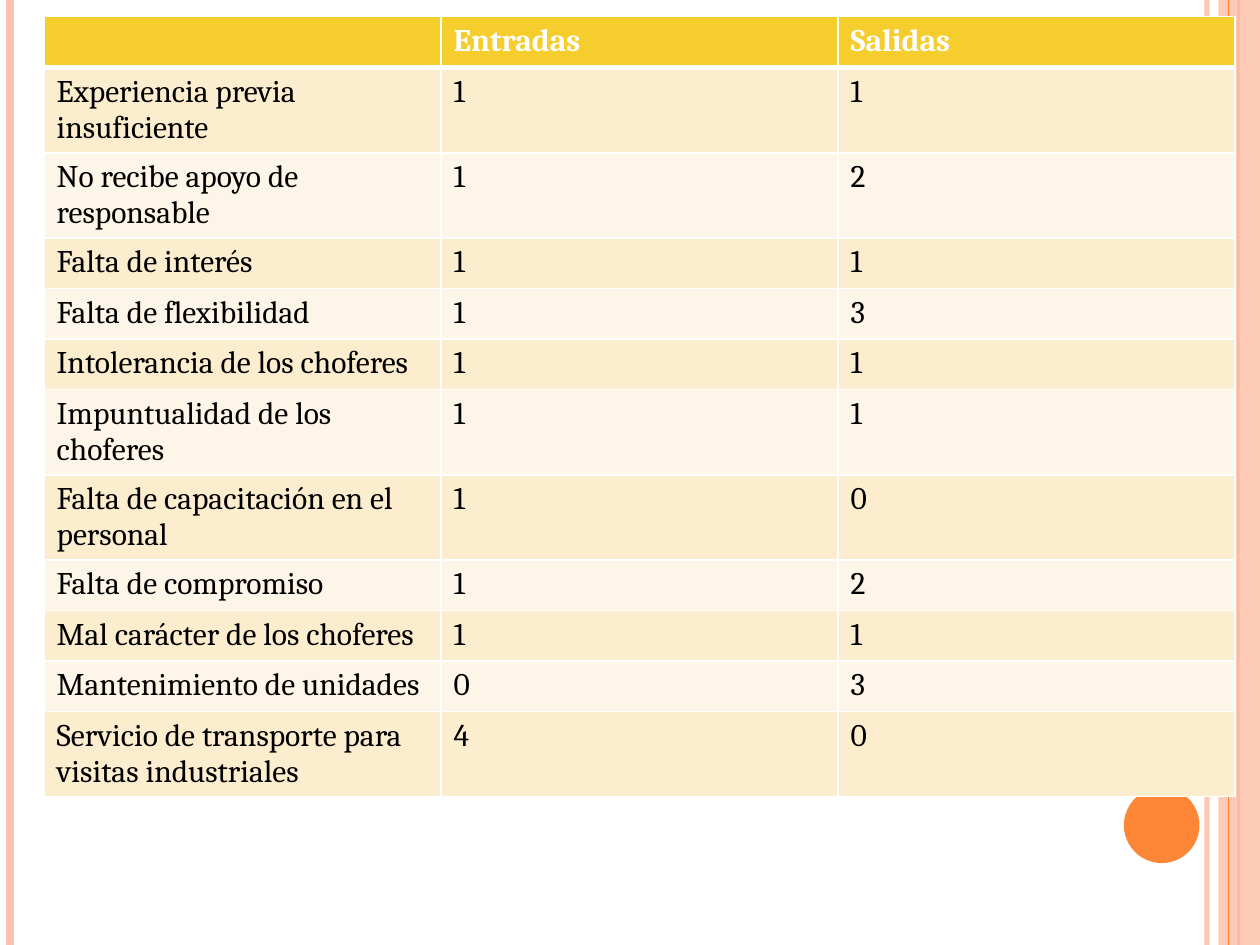
"""Build a slide with a table of entries and exits per transport problem."""
from dataclasses import dataclass

from lxml import etree
from pptx import Presentation
from pptx.dml.color import RGBColor
from pptx.enum.shapes import MSO_CONNECTOR, MSO_SHAPE
from pptx.oxml.ns import qn
from pptx.util import Inches, Pt

STRAIGHT = MSO_CONNECTOR.STRAIGHT
RECTANGLE = MSO_SHAPE.RECTANGLE
OVAL = MSO_SHAPE.OVAL
BLANK_LAYOUT = 6


@dataclass(frozen=True)
class Theme:
    """Colours, font and sizes of the slide."""
    font: str = "Cambria"
    text_size: int = 18
    orange: str = "FE8637"
    peach: str = "FEC3AE"
    header: str = "F5CD2D"
    bands: tuple = ("FDF6E8", "FBEDCD")
    white: str = "FFFFFF"
    black: str = "000000"


def set_alpha(shape, percent):
    """Make the first colour of a shape partly transparent."""
    colour = next(shape.element.spPr.iter(qn("a:srgbClr")))
    etree.SubElement(colour, qn("a:alpha")).set("val", str(percent * 1000))


def add_border(cell, side, points, colour):
    """Append one solid border to a table cell."""
    properties = cell._tc.get_or_add_tcPr()
    line = etree.SubElement(properties, qn(f"a:ln{side}"), w=str(Pt(points)))
    fill = etree.SubElement(line, qn("a:solidFill"))
    etree.SubElement(fill, qn("a:srgbClr"), val=colour)


theme = Theme()
presentation = Presentation()
presentation.slide_width = Inches(10)
presentation.slide_height = Inches(7.5)
slide = presentation.slides.add_slide(presentation.slide_layouts[BLANK_LAYOUT])

decorations = [
    ("line", 9.58, theme.peach, 3, 93),
    ("line", 0.08, theme.peach, 4.5, 100),
    ("line", 9.83, theme.orange, 1.5, 100),
    (RECTANGLE, (9.67, 0, 0.33, 7.5), theme.peach, 0, 87),
    ("line", 9.75, theme.orange, 0.75, 100),
    (OVAL, (8.92, 6.25, 0.6, 0.6), theme.orange, 0, 100),
]
for kind, place, colour, width, alpha in decorations:
    if kind == "line":
        shape = slide.shapes.add_connector(
            STRAIGHT, Inches(place), 0, Inches(place), presentation.slide_height)
        shape.line.color.rgb = RGBColor.from_string(colour)
        shape.line.width = Pt(width)
        etree.SubElement(shape.element.spPr, qn("a:effectLst"))
    else:
        shape = slide.shapes.add_shape(kind, *map(Inches, place))
        shape.fill.solid()
        shape.fill.fore_color.rgb = RGBColor.from_string(colour)
        shape.line.fill.background()
        shape.shadow.inherit = False
    if alpha < 100:
        set_alpha(shape, alpha)

rows = [
    ("", "Entradas", "Salidas"),
    ("Experiencia previa insuficiente", 1, 1),
    ("No recibe apoyo de responsable", 1, 2),
    ("Falta de interés", 1, 1),
    ("Falta de flexibilidad", 1, 3),
    ("Intolerancia de los choferes", 1, 1),
    ("Impuntualidad de los choferes", 1, 1),
    ("Falta de capacitación en el personal", 1, 0),
    ("Falta de compromiso", 1, 2),
    ("Mal carácter de los choferes", 1, 1),
    ("Mantenimiento de unidades", 0, 3),
    ("Servicio de transporte para visitas industriales", 4, 0),
]
column_width, row_height = 3.15, 0.4
table = slide.shapes.add_table(
    len(rows), len(rows[0]), Inches(0.35), Inches(0.13),
    Inches(column_width * len(rows[0])), Inches(row_height * len(rows))).table

for row_index, row in enumerate(rows):
    is_header = row_index == 0
    fill_colour = theme.header if is_header else theme.bands[row_index % 2]
    text_colour = theme.white if is_header else theme.black
    font_format = {"name": theme.font, "size": Pt(theme.text_size), "bold": is_header}
    for column_index, value in enumerate(row):
        cell = table.cell(row_index, column_index)
        for side in "LRTB":
            touches_header = (row_index, side) in ((0, "B"), (1, "T"))
            add_border(cell, side, 3 if touches_header else 1, theme.white)
        cell.fill.solid()
        cell.fill.fore_color.rgb = RGBColor.from_string(fill_colour)
        paragraph = cell.text_frame.paragraphs[0]
        if value == "":
            paragraph.font.size = Pt(theme.text_size)
            continue
        run = paragraph.add_run()
        run.text = str(value)
        for name, setting in font_format.items():
            setattr(run.font, name, setting)
        run.font.color.rgb = RGBColor.from_string(text_colour)

presentation.save("out.pptx")
